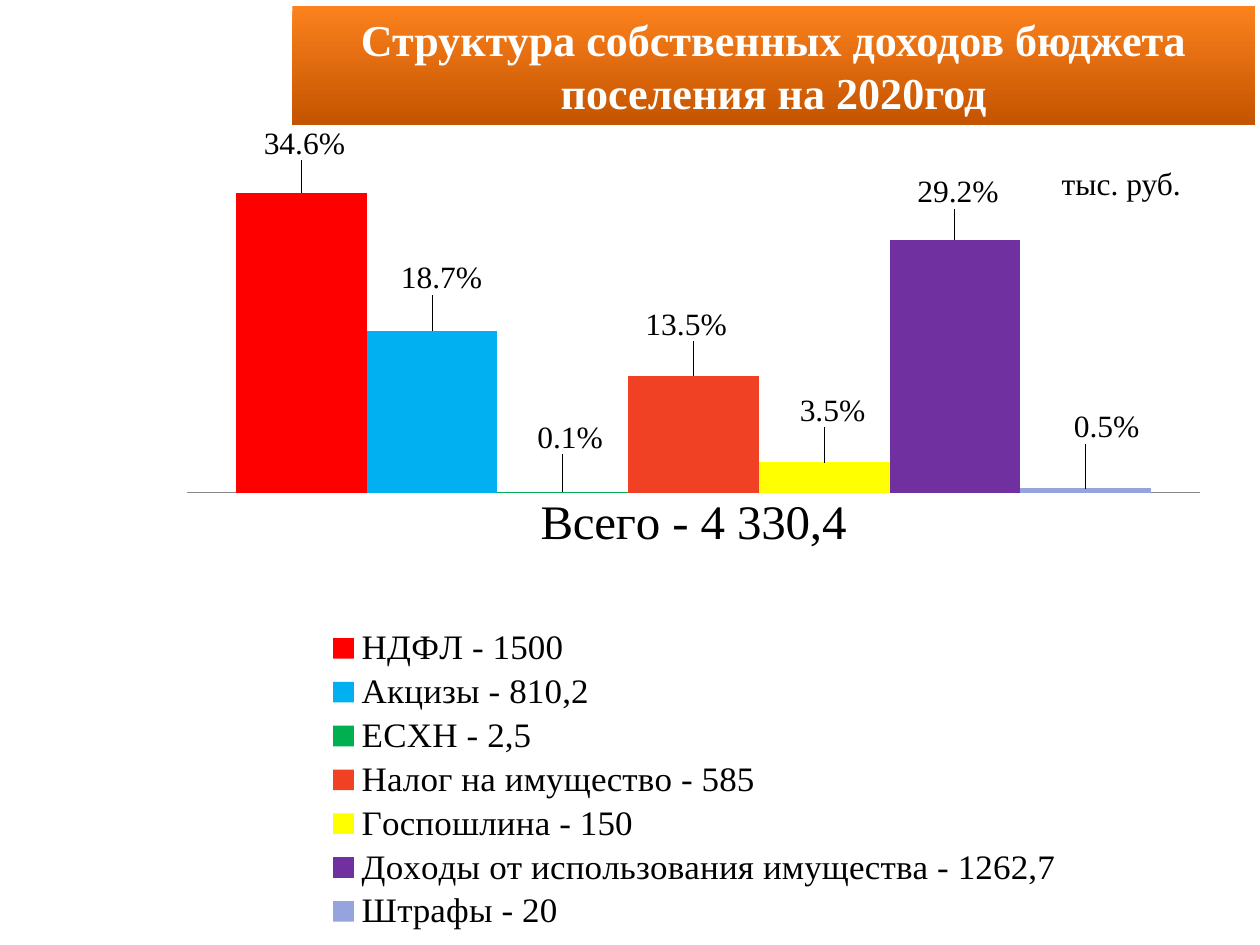
from lxml.etree import SubElement, QName
from pptx import Presentation
from pptx.chart.data import CategoryChartData
from pptx.dml.color import RGBColor
from pptx.enum.chart import (XL_CHART_TYPE, XL_LABEL_POSITION as LabelPos,
                             XL_LEGEND_POSITION as LegendPos, XL_TICK_MARK as Tick)
from pptx.enum.shapes import MSO_SHAPE as Shape
from pptx.enum.text import MSO_ANCHOR as Anchor, PP_ALIGN as Align
from pptx.util import Inches, Pt

TITLE = "Структура собственных доходов бюджета поселения на 2020год"
UNIT = "тыс. руб."
TOTAL = "Всего - 4 330,4"
# Income source, share, colour, label shift as fractions of the chart
INCOMES = [
    ("НДФЛ - 1500", 0.346, "FF0000", (0.003, -0.034)),
    ("Акцизы - 810,2", 0.187, "00B0F0", (0.009, -0.038)),
    ("ЕСХН - 2,5", 0.001, "00B050", (0.007, -0.04)),
    ("Налог на имущество - 585", 0.135, "F14124", (-0.007, -0.036)),
    ("Госпошлина - 150", 0.035, "FFFF00", (0.008, -0.037)),
    ("Доходы от использования имущества - 1262,7", 0.292, "7030A0", (0.003, -0.032)),
    ("Штрафы - 20", 0.005, "95A4DE", (0.02, -0.049)),
]
THEME = {
    "font": "Times New Roman", "text": "000000", "title": "FFFFFF",
    "banner": ("FB811D", "C45400"), "axis": "878787",
    "title_size": 25.2, "body_size": 18, "total_size": 28, "legend_size": 20,
}
SHARE_FORMAT = "0.0%"


def style(font, size, color=THEME["text"], bold=False):
    font.name, font.size, font.bold = THEME["font"], Pt(size), bold
    font.color.rgb = RGBColor.from_string(color)


def write(frame, text, size, color=THEME["text"], bold=False):
    frame.word_wrap = True
    frame.text = text
    line = frame.paragraphs[0]
    line.alignment = Align.CENTER
    style(line.runs[0].font, size, color, bold)


def chart_tag(parent, name):
    return f"{{{QName(parent).namespace}}}{name}"


def set_layout(parent, position, **values):
    """Give a chart part a manual layout at a child position."""
    for old in parent.findall(chart_tag(parent, "layout")):
        parent.remove(old)
    layout = SubElement(parent, chart_tag(parent, "layout"))
    manual = SubElement(layout, chart_tag(parent, "manualLayout"))
    for name, value in values.items():
        SubElement(manual, chart_tag(parent, name)).set("val", str(value))
    parent.insert(position, layout)


prs = Presentation()
prs.slide_width, prs.slide_height = Inches(10), Inches(7.5)
slide = prs.slides.add_slide(prs.slide_layouts[6])

# Title banner
banner = slide.shapes.add_shape(Shape.RECTANGLE, Inches(2.32), Inches(0.05),
                                Inches(7.64), Inches(0.94))
banner.shadow.inherit = False
banner.line.fill.background()
banner.fill.gradient()
banner.fill.gradient_angle = 270
for stop, color, place in zip(banner.fill.gradient_stops, THEME["banner"], (0, 1)):
    stop.color.rgb = RGBColor.from_string(color)
    stop.position = place
banner.text_frame.vertical_anchor = Anchor.MIDDLE
write(banner.text_frame, TITLE, THEME["title_size"], THEME["title"], True)

# Unit note
unit = slide.shapes.add_textbox(Inches(8.15), Inches(1.25), Inches(1.5), Inches(0.4))
write(unit.text_frame, UNIT, THEME["body_size"])

# Income chart
shares = CategoryChartData(number_format=SHARE_FORMAT)
shares.categories = [TOTAL]
for name, share, *_ in INCOMES:
    shares.add_series(name, [share])
chart = slide.shapes.add_chart(XL_CHART_TYPE.COLUMN_CLUSTERED, Inches(1.3), Inches(1.01),
                               Inches(8.35), Inches(6.47), shares).chart
style(chart.font, THEME["body_size"])
chart.has_title = False
columns = chart.plots[0]
columns.gap_width, columns.overlap, columns.vary_by_categories = 75, 0, False
plot_area = chart._chartSpace.chart.plotArea
set_layout(plot_area, 0, layoutTarget="inner", xMode="edge", yMode="edge",
           x=0.022, y=0.005, w=0.963, h=0.433)

# Axes
total_axis, share_axis = chart.category_axis, chart.value_axis
total_axis.major_tick_mark = total_axis.minor_tick_mark = Tick.NONE
total_axis.format.line.color.rgb = RGBColor.from_string(THEME["axis"])
total_axis.format.line.width = Pt(0.75)
style(total_axis.tick_labels.font, THEME["total_size"])
share_axis.minimum_scale, share_axis.maximum_scale = 0, 0.4
share_axis.has_major_gridlines = False
share_axis.tick_labels.number_format = SHARE_FORMAT
share_axis.tick_labels.number_format_is_linked = False
share_axis.visible = False

# Columns and their share labels
for series, (_, _, color, (dx, dy)) in zip(columns.series, INCOMES):
    series.format.fill.solid()
    series.format.fill.fore_color.rgb = RGBColor.from_string(color)
    series.invert_if_negative = False
    labels = series.data_labels
    labels.show_value = True
    labels.number_format, labels.number_format_is_linked = SHARE_FORMAT, False
    labels.position = LabelPos.OUTSIDE_END
    style(labels.font, THEME["body_size"])
    label = series.points[0].data_label
    label.position = LabelPos.OUTSIDE_END
    style(label.font, THEME["body_size"])
    share_label = labels._element[0]
    set_layout(share_label, 1, x=dx, y=dy)
    number_format = SubElement(share_label, chart_tag(share_label, "numFmt"))
    number_format.set("formatCode", SHARE_FORMAT)
    number_format.set("sourceLinked", "0")
    share_label.insert(2, number_format)

# Legend
chart.has_legend = True
legend = chart.legend
legend.position = LegendPos.BOTTOM
legend.include_in_layout = False
style(legend.font, THEME["legend_size"])
set_layout(legend._element, 1, xMode="edge", yMode="edge", x=0.145, y=0.602, w=0.72, h=0.39)

prs.save("out.pptx")
